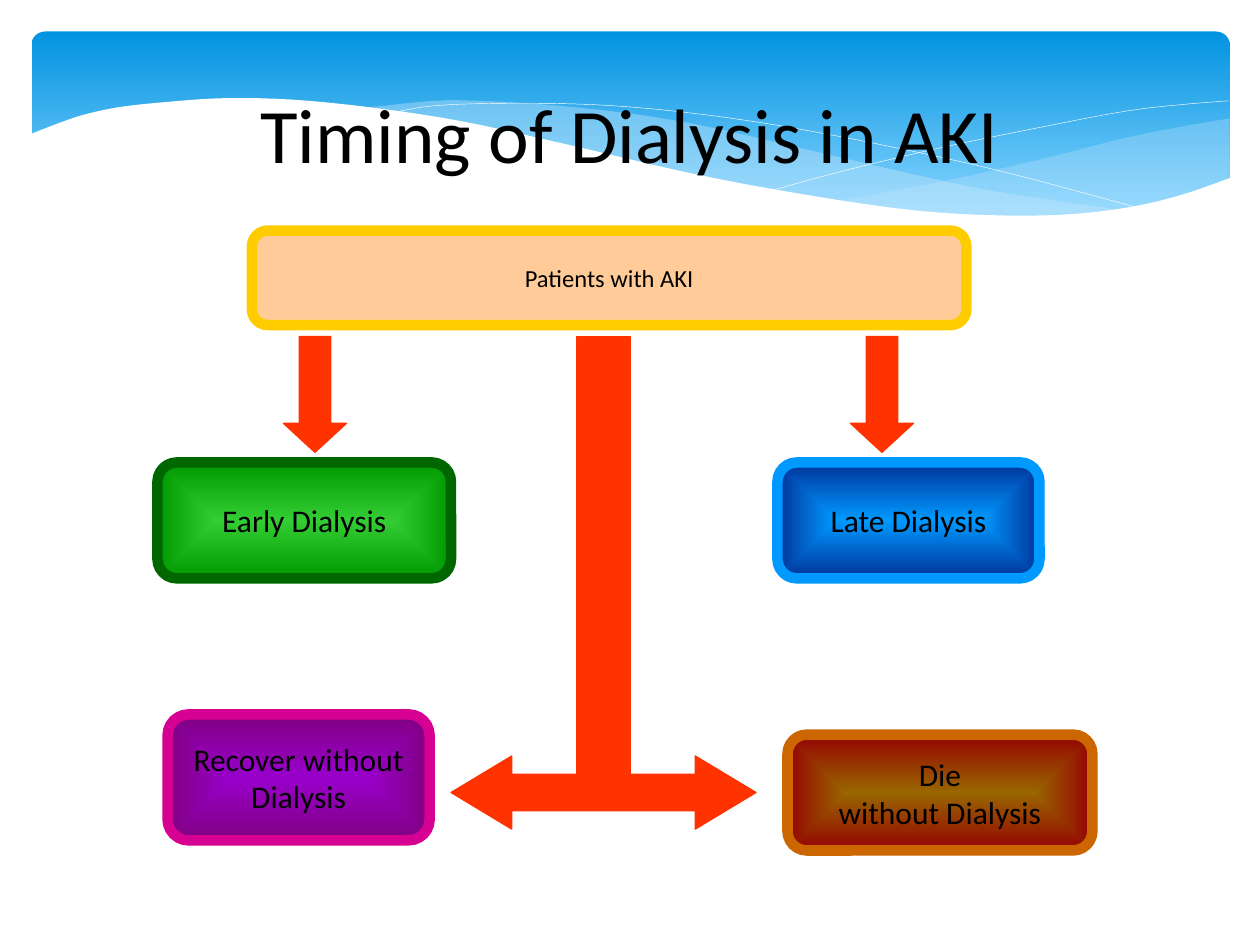
import pptx
import pptx.dml.color
import pptx.enum.shapes
import pptx.enum.text
import pptx.oxml
import pptx.oxml.ns
import pptx.util
from dataclasses import dataclass

Inches, Pt = pptx.util.Inches, pptx.util.Pt
RGB = pptx.dml.color.RGBColor.from_string
SHAPE = pptx.enum.shapes.MSO_SHAPE
ALIGN = pptx.enum.text.PP_ALIGN
ANCHOR = pptx.enum.text.MSO_ANCHOR
NS = pptx.oxml.ns.nsdecls("a")


@dataclass(frozen=True)
class Theme:
    font: str = "Calibri"
    text: str = "000000"
    paper: str = "FFFFFF"
    wave: str = "C6E7FC"
    sky: tuple = ("0293E0", "83D3FE")
    arrow: str = "FF3300"
    patients: tuple = ("FFCC99", "FFCC00")
    early: tuple = ("33CC33", "009900", "006600")
    late: tuple = ("0099FF", "003399", "0099FF")
    recover: tuple = ("9900CC", "800080", "D60093")
    die: tuple = ("996600", "940202", "CC6600")
    title_size: int = 44
    card_size: int = 18
    small_size: int = 14
    card_line: int = 6
    arrow_line: float = 0.75
    wave_line: float = 0.25


def smooth(points, steps=5):
    """Catmull-Rom curve through the points; two points stay a straight line."""
    if len(points) < 3:
        return points
    ends = [points[0], *points, points[-1]]
    curve = [points[0]]
    for a, b, c, d in zip(ends, ends[1:], ends[2:], ends[3:]):
        for i in range(1, steps + 1):
            t = i / steps
            curve.append(tuple(
                (2 * q + (r - p) * t + (2 * p - 5 * q + 4 * r - s) * t ** 2
                 + (3 * q - p - 3 * r + s) * t ** 3) / 2
                for p, q, r, s in zip(a, b, c, d)))
    return curve


class Deck:
    def __init__(self, theme):
        self.theme = theme
        self.prs = pptx.Presentation()
        self.prs.slide_width, self.prs.slide_height = Inches(10), Inches(7.5)
        self.s = self.prs.slides.add_slide(self.prs.slide_layouts[6])
        self.s.background.fill.solid()
        self.s.background.fill.fore_color.rgb = RGB(theme.paper)

    def paint(self, sp, fill=None, line=None, width=0):
        sp.shadow.inherit = False
        if fill:
            sp.fill.solid()
            sp.fill.fore_color.rgb = RGB(fill)
        else:
            sp.fill.background()
        if line:
            sp.line.color.rgb = RGB(line)
            sp.line.width = Pt(width)
        else:
            sp.line.fill.background()

    def gradient(self, sp, colors, last=1.0):
        """Top-to-bottom gradient that reaches its second colour at last."""
        sp.fill.gradient()
        sp.fill.gradient_angle = 270
        for stop, color, position in zip(sp.fill.gradient_stops, colors, (0, last)):
            stop.color.rgb = RGB(color)
            stop.position = position

    def center_out(self, sp):
        """Turn the linear gradient into one that spreads from the middle."""
        lin = sp._element.spPr.find(".//" + pptx.oxml.ns.qn("a:lin"))
        lin.getparent().replace(lin, pptx.oxml.parse_xml(
            f'<a:path {NS} path="shape">'
            '<a:fillToRect l="50000" t="50000" r="50000" b="50000"/></a:path>'))

    def shape(self, kind, box, adjustments=()):
        sp = self.s.shapes.add_shape(kind, *map(Inches, box))
        for i, value in enumerate(adjustments):
            sp.adjustments[i] = value
        return sp

    def set_text(self, sp, text, size, wrap):
        tf = sp.text_frame
        tf.text = text
        tf.word_wrap = wrap
        tf.vertical_anchor = ANCHOR.MIDDLE
        for p in tf.paragraphs:
            p.alignment = ALIGN.CENTER
            for r in p.runs:
                r.font.name = self.theme.font
                r.font.size = Pt(size)
                r.font.color.rgb = RGB(self.theme.text)

    def title(self, text, box):
        self.set_text(self.s.shapes.add_textbox(*map(Inches, box)), text,
                      self.theme.title_size, True)

    def banner(self, box):
        sp = self.shape(SHAPE.ROUNDED_RECTANGLE, box, [0.07])
        self.paint(sp)
        self.gradient(sp, self.theme.sky, 0.9)

    def card(self, text, box, colors, size):
        """Rounded box; colors are one or two fills, then the border."""
        *fills, border = colors
        sp = self.shape(SHAPE.ROUNDED_RECTANGLE, box, [0.167])
        self.paint(sp, fills[0], border, self.theme.card_line)
        if len(fills) == 2:
            self.gradient(sp, fills)
            self.center_out(sp)
        self.set_text(sp, text, size, False)

    def arrow(self, kind, box, adjustments=()):
        sp = self.shape(kind, box, adjustments)
        self.paint(sp, self.theme.arrow, self.theme.arrow, self.theme.arrow_line)

    def outline(self, pieces, closed):
        points = [(Inches(x), Inches(y)) for piece in pieces for x, y in smooth(piece)]
        builder = self.s.shapes.build_freeform(*points[0])
        builder.add_line_segments(points[1:], close=closed)
        return builder.convert_to_shape()

    def wave(self, pieces, color, alpha=100):
        sp = self.outline(pieces, True)
        self.paint(sp, color)
        if alpha < 100:
            color_node = sp._element.spPr.find(".//" + pptx.oxml.ns.qn("a:srgbClr"))
            color_node.append(pptx.oxml.parse_xml(f'<a:alpha {NS} val="{alpha * 1000}"/>'))

    def wave_line(self, points):
        self.paint(self.outline([points], False), None, self.theme.paper,
                   self.theme.wave_line)


RIGHT_WAVE = [
    [(9.76, 0.94), (9.35, 1.01), (8.91, 1.1), (8.32, 1.25), (7.53, 1.43), (6.61, 1.6)],
    [(6.61, 1.6), (7.19, 1.67), (7.69, 1.71), (8.14, 1.72), (8.54, 1.7), (8.89, 1.66),
     (9.21, 1.6), (9.49, 1.52), (9.76, 1.41)],
]
MIDDLE_WAVE = [
    [(8.93, 1.67), (8.37, 1.59), (7.75, 1.49), (7.06, 1.34), (6.29, 1.16), (5.69, 1.02),
     (5.14, 0.92), (4.65, 0.86), (4.2, 0.82), (3.8, 0.8), (3.44, 0.8), (2.86, 0.86)],
    [(2.86, 0.86), (3.42, 0.94), (4.04, 1.06), (4.91, 1.26), (5.66, 1.43), (6.34, 1.56),
     (6.95, 1.65), (7.48, 1.7), (8.07, 1.73), (8.48, 1.72), (8.93, 1.67)],
]
WHITE_WAVE = [
    [(9.77, 1.41), (9.4, 1.54), (8.99, 1.64), (8.5, 1.7), (7.93, 1.71), (7.26, 1.67),
     (6.48, 1.56), (5.55, 1.39), (4.47, 1.14), (3.65, 0.96), (2.92, 0.85), (2.3, 0.79),
     (1.77, 0.78), (1.32, 0.81), (0.95, 0.85), (0.67, 0.91), (0.46, 0.98), (0.23, 1.07)],
    [(0.23, 2.24), (9.77, 2.24)],
]
FALLING_LINE = [(3.09, 0.9), (3.44, 0.84), (4.01, 0.82), (4.69, 0.83), (5.33, 0.88),
                (6.08, 0.98), (6.95, 1.14), (7.95, 1.36), (9.07, 1.66)]
RISING_LINE = [(6.13, 1.51), (6.72, 1.35), (7.48, 1.17), (8.36, 0.99), (8.95, 0.88),
               (9.38, 0.83), (9.75, 0.8)]


def main():
    theme = Theme()
    deck = Deck(theme)

    deck.banner((0.25, 0.25, 9.51, 1.56))
    deck.wave(RIGHT_WAVE, theme.wave, 29)
    deck.wave(MIDDLE_WAVE, theme.wave, 40)
    deck.wave_line(FALLING_LINE)
    deck.wave_line(RISING_LINE)
    deck.wave(WHITE_WAVE, theme.paper)
    deck.title("Timing of Dialysis in AKI", (0.5, 0.37, 9, 1.37))

    deck.card("Patients with AKI", (2, 1.83, 5.67, 0.75), theme.patients, theme.small_size)
    deck.arrow(SHAPE.LEFT_RIGHT_ARROW, (3.58, 6, 2.42, 0.58), [0.5, 0.83])
    deck.arrow(SHAPE.RECTANGLE, (4.58, 2.67, 0.42, 3.5))
    for left in (2.25, 6.75):
        deck.arrow(SHAPE.DOWN_ARROW, (left, 2.67, 0.5, 0.92), [0.5, 0.46])

    for text, box, colors in (
        ("Early Dialysis", (1.25, 3.67, 2.33, 0.92), theme.early),
        ("Late Dialysis", (6.17, 3.67, 2.08, 0.92), theme.late),
        ("Recover without\nDialysis", (1.33, 5.67, 2.08, 1), theme.recover),
        ("Die\nwithout Dialysis", (6.25, 5.83, 2.42, 0.92), theme.die),
    ):
        deck.card(text, box, colors, theme.card_size)

    deck.prs.save("out.pptx")


if __name__ == "__main__":
    main()
